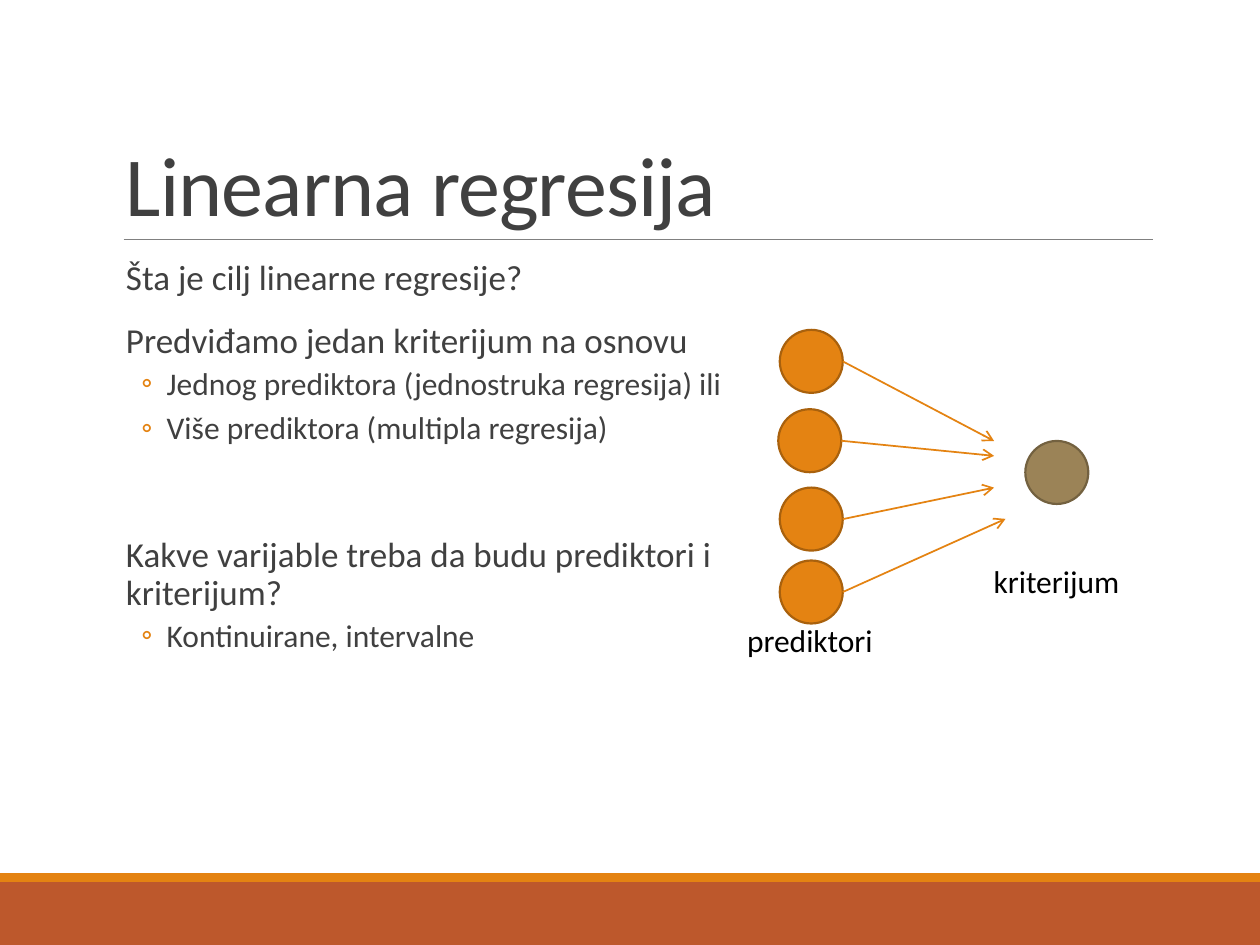
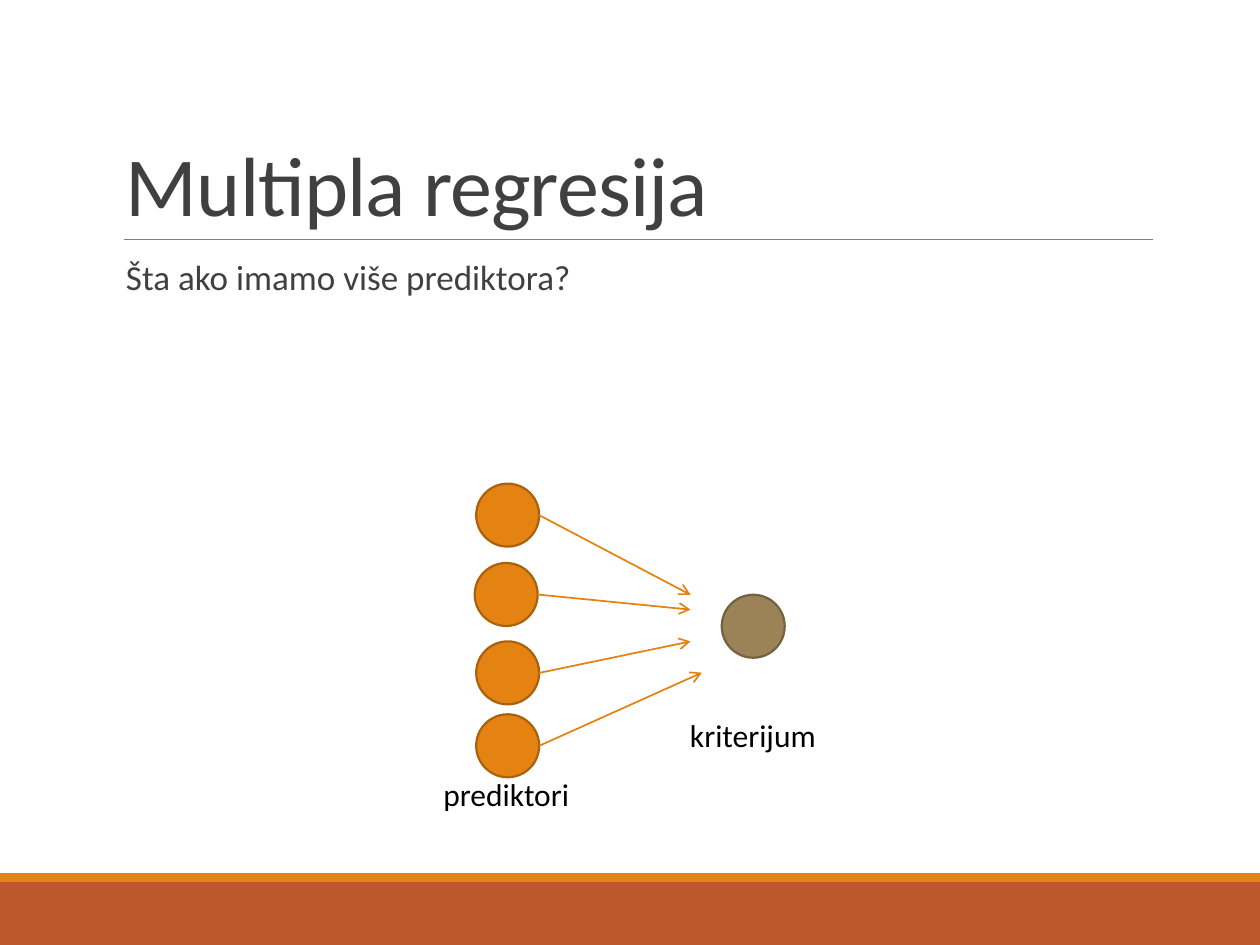
from dataclasses import dataclass

from lxml.etree import SubElement
from pptx import Presentation
from pptx.dml.color import RGBColor
from pptx.enum.shapes import MSO_CONNECTOR, MSO_SHAPE
from pptx.enum.text import MSO_ANCHOR, MSO_AUTO_SIZE
from pptx.oxml.ns import qn
from pptx.util import Cm, Pt


@dataclass(frozen=True)
class Theme:
    font: str = "Calibri"
    orange: str = "E48312"
    orange_edge: str = "A9610D"
    rust: str = "BD582C"
    tan: str = "9B8357"
    tan_edge: str = "736140"
    rule: str = "808080"
    text: str = "404040"
    black: str = "000000"
    title_size: int = 48
    body_size: int = 20
    sub_size: int = 18


THEME = Theme()

# Paragraph formats: body lines, sub-items, and a body line that opens a new block
BODY = {"line_spacing": 0.9, "space_before": Pt(12), "space_after": Pt(2)}
SUB = {"line_spacing": 0.9, "space_before": Pt(2), "space_after": Pt(4)}
NEW_BLOCK = {**BODY, "space_before": Pt(48)}

# Diagram geometry in cm, measured from the first predictor's corner
DIAMETER = 1.27
PREDICTORS = [(0, 0), (-0.03, 1.6), (0, 3.18), (0, 4.65)]
ARROW_TIPS = [(4.32, 2.24), (4.32, 2.54), (4.32, 3.18), (4.55, 3.81)]
CRITERION = (4.95, 2.24)
LABELS = [("prediktori", -0.91, 5.74), ("kriterijum", 4.06, 4.55)]


def set_format(target, values):
    for name, value in values.items():
        setattr(target, name, value)


def add_filled(s, kind, x, y, w, h, fill, edge=None):
    sp = s.shapes.add_shape(kind, Cm(x), Cm(y), Cm(w), Cm(h))
    sp.shadow.inherit = False
    sp.fill.solid()
    sp.fill.fore_color.rgb = RGBColor.from_string(fill)
    if edge:
        sp.line.color.rgb = RGBColor.from_string(edge)
        sp.line.width = Pt(1.25)
    else:
        sp.line.fill.background()


def add_line(s, x1, y1, x2, y2, color, width, arrow=False):
    line = s.shapes.add_connector(
        MSO_CONNECTOR.STRAIGHT, Cm(x1), Cm(y1), Cm(x2), Cm(y2))
    line.line.color.rgb = RGBColor.from_string(color)
    line.line.width = Pt(width)
    if arrow:
        SubElement(line.line._get_or_add_ln(), qn("a:tailEnd"), type="arrow")
    SubElement(line._element.spPr, qn("a:effectLst"))


def add_text_frame(s, x, y, w, h, **values):
    tf = s.shapes.add_textbox(Cm(x), Cm(y), Cm(w), Cm(h)).text_frame
    set_format(tf, {"word_wrap": True, **values})
    return tf


def write(p, text, size, color, **values):
    set_format(p, values)
    r = p.add_run()
    r.text = text
    set_format(r.font, {"name": THEME.font, "size": Pt(size)})
    r.font.color.rgb = RGBColor.from_string(color)
    return r


def set_indent(p, left, first=0, bullet=None):
    pPr = p._p.get_or_add_pPr()
    pPr.set("marL", str(Cm(left)))
    pPr.set("indent", str(Cm(first)))
    if bullet:
        color = SubElement(pPr, qn("a:buClr"))
        SubElement(color, qn("a:srgbClr"), val=THEME.orange)
        SubElement(pPr, qn("a:buFont"), typeface=THEME.font)
        SubElement(pPr, qn("a:buChar"), char=bullet)


def add_base_slide(prs, title):
    s = prs.slides.add_slide(prs.slide_layouts[6])
    # Footer bands and title rule
    add_filled(s, MSO_SHAPE.RECTANGLE, 0, 17.78, 25.4, 1.27, THEME.rust)
    add_filled(s, MSO_SHAPE.RECTANGLE, 0, 17.6, 25.4, 0.18, THEME.orange)
    add_line(s, 2.49, 4.83, 23.24, 4.83, THEME.rule, 0.5)
    # Title
    tf = add_text_frame(s, 2.29, 0.79, 20.96, 4.04,
                        vertical_anchor=MSO_ANCHOR.BOTTOM)
    r = write(tf.paragraphs[0], title, THEME.title_size, THEME.text,
              line_spacing=0.85)
    r.font._element.set("spc", "-50")
    return s


def add_body(s, width, lines):
    tf = add_text_frame(s, 2.29, 5.13, width, 11.18,
                        margin_left=0, margin_right=0)
    for i, (text, style) in enumerate(lines):
        p = tf.add_paragraph() if i else tf.paragraphs[0]
        is_sub = style is SUB
        size = THEME.sub_size if is_sub else THEME.body_size
        write(p, text, size, THEME.text, **style)
        if is_sub:
            set_indent(p, 1.07, -0.51, "◦")
        else:
            set_indent(p, 0.25)


def add_regression_diagram(s, left, top):
    def add_circle(x, y, fill, edge):
        add_filled(s, MSO_SHAPE.OVAL, left + x, top + y,
                   DIAMETER, DIAMETER, fill, edge)

    # Predictors and criterion
    for x, y in PREDICTORS:
        add_circle(x, y, THEME.orange, THEME.orange_edge)
    add_circle(*CRITERION, THEME.tan, THEME.tan_edge)

    # Arrows from each predictor's right side
    for (x, y), (tip_x, tip_y) in zip(PREDICTORS, ARROW_TIPS):
        add_line(s, left + x + DIAMETER, top + y + DIAMETER / 2,
                 left + tip_x, top + tip_y, THEME.orange, 1, arrow=True)

    # Labels
    for text, x, y in LABELS:
        tf = add_text_frame(s, left + x, top + y, 3.07, 1.02, word_wrap=False,
                            auto_size=MSO_AUTO_SIZE.SHAPE_TO_FIT_TEXT)
        write(tf.paragraphs[0], text, THEME.sub_size, THEME.black)


def main():
    prs = Presentation()
    set_format(prs, {"slide_width": Cm(25.4), "slide_height": Cm(19.05)})

    # Linear regression
    s = add_base_slide(prs, "Linearna regresija")
    add_body(s, 14.05, [
        ("Šta je cilj linearne regresije?", BODY),
        ("Predviđamo jedan kriterijum na osnovu", BODY),
        ("Jednog prediktora (jednostruka regresija) ili", SUB),
        ("Više prediktora (multipla regresija)", SUB),
        ("Kakve varijable treba da budu prediktori i kriterijum?", NEW_BLOCK),
        ("Kontinuirane, intervalne", SUB),
    ])
    add_regression_diagram(s, 15.72, 6.65)

    # Multiple regression
    s = add_base_slide(prs, "Multipla regresija")
    add_body(s, 20.96, [("Šta ako imamo više prediktora?", BODY)])
    add_regression_diagram(s, 9.6, 9.75)

    prs.save("out.pptx")


if __name__ == "__main__":
    main()
